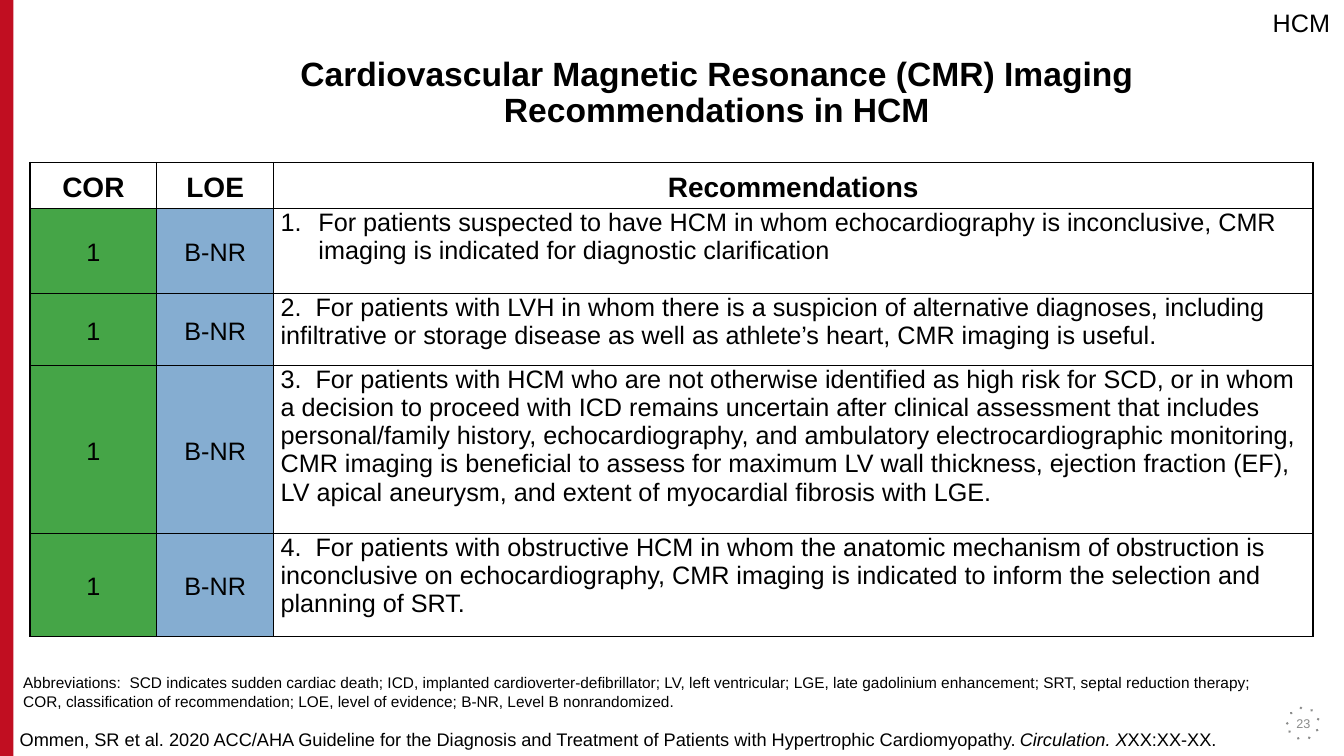
from lxml import etree
from pptx import Presentation
from pptx.dml.color import RGBColor
from pptx.enum import shapes, text
from pptx.oxml import ns
from pptx.util import Pt

BLACK = RGBColor(0x00, 0x00, 0x00)
WHITE = RGBColor(0xFF, 0xFF, 0xFF)
RED = RGBColor(0xC1, 0x0E, 0x21)
GREEN = RGBColor(0x45, 0xA5, 0x47)
BLUE = RGBColor(0x85, 0xAD, 0xD1)
GRAY = RGBColor(0x8A, 0x8B, 0x8A)

TITLE = "Cardiovascular Magnetic Resonance (CMR) Imaging Recommendations in HCM"
TOPIC = "HCM"
HEADERS = ["COR", "LOE", "Recommendations"]
RECOMMENDATIONS = [
    ("1", "B-NR", "For patients suspected to have HCM in whom echocardiography is "
     "inconclusive, CMR imaging is indicated for diagnostic clarification"),
    ("1", "B-NR", "2.  For patients with LVH in whom there is a suspicion of alternative "
     "diagnoses, including infiltrative or storage disease as well as athlete’s heart, "
     "CMR imaging is useful."),
    ("1", "B-NR", "3.  For patients with HCM who are not otherwise identified as high risk "
     "for SCD, or in whom a decision to proceed with ICD remains uncertain after clinical "
     "assessment that includes personal/family history, echocardiography, and ambulatory "
     "electrocardiographic monitoring, CMR imaging is beneficial to assess for maximum LV "
     "wall thickness, ejection fraction (EF), LV apical aneurysm, and extent of myocardial "
     "fibrosis with LGE."),
    ("1", "B-NR", "4.  For patients with obstructive HCM in whom the anatomic mechanism of "
     "obstruction is inconclusive on echocardiography, CMR imaging is indicated to inform "
     "the selection and planning of SRT."),
]
ABBREVIATIONS = (
    "Abbreviations:  SCD indicates sudden cardiac death; ICD, implanted "
    "cardioverter-defibrillator; LV, left ventricular; LGE, late gadolinium enhancement; "
    "SRT, septal reduction therapy; COR, classification of recommendation; LOE, level of "
    "evidence; B-NR, Level B nonrandomized.")
CITATION = [
    ("Ommen, SR et al. 2020 ACC/AHA Guideline for the Diagnosis and Treatment of Patients "
     "with Hypertrophic Cardiomyopathy. ", False),
    ("Circulation. X", True),
    ("XX:XX-XX.", False),
]
PAGE_NUMBER = "23"

COLUMN_WIDTHS = [90.5, 83.5, 742.5]
ROW_HEIGHTS = [33, 60.5, 51.5, 120, 73.5]
COLUMN_FILLS = [GREEN, BLUE, WHITE]
CENTER = text.PP_ALIGN.CENTER
MIDDLE = text.MSO_ANCHOR.MIDDLE


def style(font, size, color=BLACK, bold=False, italic=False):
    font.name, font.size, font.bold, font.italic = "Arial", Pt(size), bold, italic
    font.color.rgb = color


def add_text(slide, place, spans, size, color=BLACK):
    """Add a one-paragraph text box; spans are (words, italic) pairs."""
    box = slide.shapes.add_textbox(*map(Pt, place))
    box.text_frame.word_wrap = True
    para = box.text_frame.paragraphs[0]
    for words, italic in spans:
        span = para.add_run()
        span.text = words
        style(span.font, size, color, italic=italic)
    return box


def add_borders(cell):
    properties = cell._tc.get_or_add_tcPr()
    for side in ("lnL", "lnR", "lnT", "lnB"):
        line = etree.SubElement(properties, ns.qn("a:" + side), w=str(Pt(1)))
        fill = etree.SubElement(line, ns.qn("a:solidFill"))
        etree.SubElement(fill, ns.qn("a:srgbClr"), val=str(BLACK))


def number_paragraph(para, indent):
    properties = para._p.get_or_add_pPr()
    properties.set("marL", str(Pt(indent)))
    properties.set("indent", str(-Pt(indent)))
    etree.SubElement(properties, ns.qn("a:buFont"), typeface="+mj-lt")
    etree.SubElement(properties, ns.qn("a:buAutoNum"), type="arabicPeriod")


def add_recommendations(slide):
    rows = [HEADERS, *RECOMMENDATIONS]
    table = slide.shapes.add_table(
        len(rows), len(HEADERS), Pt(21.5), Pt(116),
        Pt(sum(COLUMN_WIDTHS)), Pt(sum(ROW_HEIGHTS))).table
    table.horz_banding = False
    for column, width in zip(table.columns, COLUMN_WIDTHS):
        column.width = Pt(width)
    for r, row in enumerate(rows):
        table.rows[r].height = Pt(ROW_HEIGHTS[r])
        for c, words in enumerate(row):
            header = r == 0
            cell = table.cell(r, c)
            add_borders(cell)
            cell.fill.solid()
            cell.fill.fore_color.rgb = WHITE if header else COLUMN_FILLS[c]
            cell.margin_left = cell.margin_right = Pt(5)
            cell.margin_top = cell.margin_bottom = 0
            cell.text_frame.text = words
            para = cell.text_frame.paragraphs[0]
            if header or c < 2:
                cell.vertical_anchor = MIDDLE
                para.alignment = CENTER
                para.line_spacing = 1.15
            elif r == 1:
                number_paragraph(para, 27)
            style(para.runs[0].font, 20 if header else 18, bold=header)


def add_page_number(slide):
    ring = slide.shapes.add_shape(shapes.MSO_SHAPE.OVAL, Pt(919.5), Pt(505.5), Pt(22.5), Pt(22.5))
    ring.shadow.inherit = False
    ring.fill.background()
    ring.line.color.rgb = GRAY
    ring.line.width = Pt(2)
    outline = ring.line._get_or_add_ln()
    outline.set("cap", "rnd")
    etree.SubElement(outline, ns.qn("a:prstDash"), val="dot")
    box = add_text(slide, (915, 502.5, 32, 28), [(PAGE_NUMBER, False)], 9, GRAY)
    box.text_frame.vertical_anchor = MIDDLE
    box.text_frame.paragraphs[0].alignment = CENTER


def main():
    deck = Presentation()
    deck.slide_width, deck.slide_height = Pt(960), Pt(540)
    slide = deck.slides.add_slide(deck.slide_layouts[5])

    title = slide.shapes.title
    title.left, title.top, title.width, title.height = map(Pt, (176.5, 36.5, 671, 60.5))
    title.text_frame.text = TITLE
    title.text_frame.vertical_anchor = MIDDLE
    para = title.text_frame.paragraphs[0]
    para.alignment = CENTER
    para.line_spacing = 0.9
    style(para.runs[0].font, 24, bold=True)

    band = slide.shapes.add_shape(shapes.MSO_SHAPE.RECTANGLE, 0, 0, Pt(9.5), Pt(540))
    band.shadow.inherit = False
    band.fill.solid()
    band.fill.fore_color.rgb = RED
    band.line.fill.background()

    add_text(slide, (902, 2, 58, 29), [(TOPIC, False)], 18)
    add_recommendations(slide)
    add_text(slide, (9.5, 477.5, 907, 34), [(ABBREVIATIONS, False)], 11)
    add_text(slide, (7, 517, 940, 23), CITATION, 13)
    add_page_number(slide)
    deck.save("out.pptx")


if __name__ == "__main__":
    main()
